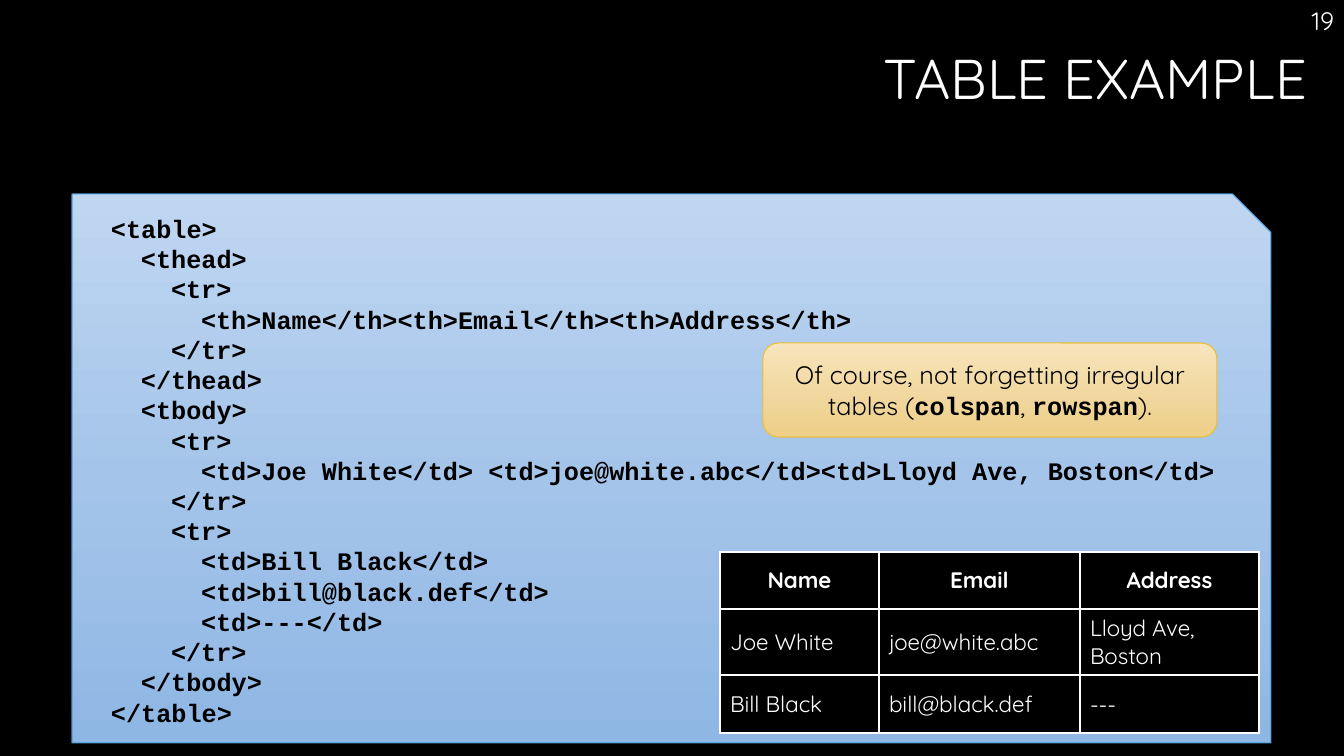
from copy import deepcopy

from lxml import etree
from pptx import Presentation
from pptx import util as u
from pptx.dml.color import RGBColor
from pptx.enum import shapes, text
from pptx.oxml import ns

PX = 914400 / 100.8
BLACK = RGBColor(0x00, 0x00, 0x00)
WHITE = RGBColor(0xFF, 0xFF, 0xFF)
BLUE_LINE = RGBColor(0x4A, 0x9B, 0xDC)
BLUE_STOPS = [
    (0, RGBColor(0xBF, 0xD6, 0xF2)),
    (0.52, RGBColor(0xA4, 0xC4, 0xE9)),
    (1, RGBColor(0x8F, 0xB7, 0xE4)),
]
GOLD_LINE = RGBColor(0xE9, 0xBF, 0x35)
GOLD_STOPS = [
    (0, RGBColor(0xF8, 0xE5, 0xBD)),
    (0.52, RGBColor(0xF1, 0xD8, 0xA0)),
    (1, RGBColor(0xEE, 0xCF, 0x89)),
]
LEFT, CENTER, RIGHT = text.PP_ALIGN.LEFT, text.PP_ALIGN.CENTER, text.PP_ALIGN.RIGHT
TOP, MIDDLE = text.MSO_ANCHOR.TOP, text.MSO_ANCHOR.MIDDLE
INDENT = 30

CODE = [
    (0, "<table>"),
    (1, "<thead>"),
    (2, "<tr>"),
    (3, "<th>Name</th><th>Email</th><th>Address</th>"),
    (2, "</tr>"),
    (1, "</thead>"),
    (1, "<tbody>"),
    (2, "<tr>"),
    (3, "<td>Joe White</td> <td>joe@white.abc</td><td>Lloyd Ave, Boston</td>"),
    (2, "</tr>"),
    (2, "<tr>"),
    (3, "<td>Bill Black</td>"),
    (3, "<td>bill@black.def</td>"),
    (3, "<td>---</td>"),
    (2, "</tr>"),
    (1, "</tbody>"),
    (0, "</table>"),
]
PEOPLE = [
    ["Name", "Email", "Address"],
    ["Joe White", "joe@white.abc", "Lloyd Ave, Boston"],
    ["Bill Black", "bill@black.def", "---"],
]


def px(value):
    return u.Emu(round(value * PX))


class Slide:
    body_font = "Quicksand"
    code_font = "Courier New"

    def __init__(self, deck):
        self.page = deck.slides.add_slide(deck.slide_layouts[5])
        self.page.background.fill.solid()
        self.page.background.fill.fore_color.rgb = BLACK

    def span(self, para, words, size, color, code=False, bold=False):
        span = para.add_run()
        span.text = words
        span.font.name = self.code_font if code else self.body_font
        span.font.size = u.Pt(size)
        span.font.bold = bold
        span.font.color.rgb = color

    def frame(self, box, anchor):
        frame = box.text_frame
        frame.word_wrap = True
        frame.auto_size = text.MSO_AUTO_SIZE.NONE
        frame.vertical_anchor = anchor
        return frame

    def title(self, words, left, top, width, height):
        box = self.page.shapes.title
        box.left, box.top, box.width, box.height = map(px, (left, top, width, height))
        para = self.frame(box, TOP).paragraphs[0]
        para.alignment = RIGHT
        para.line_spacing = 0.9
        self.span(para, words, 40, WHITE)

    def label(self, words, left, top, width, height):
        box = self.page.shapes.add_textbox(*map(px, (left, top, width, height)))
        para = self.frame(box, TOP).paragraphs[0]
        para.alignment = RIGHT
        self.span(para, words, 18, WHITE)

    def panel(self, kind, left, top, width, height, stops, line):
        box = self.page.shapes.add_shape(kind, *map(px, (left, top, width, height)))
        box.shadow.inherit = False
        box.fill.gradient()
        box.fill.gradient_angle = 270
        stop_list = box._element.spPr.find(".//" + ns.qn("a:gsLst"))
        stop_list.append(deepcopy(stop_list[0]))
        for stop, (position, color) in zip(box.fill.gradient_stops, stops):
            stop.position = position
            stop.color.rgb = color
        box.line.color.rgb = line
        box.line.width = u.Pt(0.75)
        return box

    def code(self, lines, left, top, width, height):
        box = self.panel(shapes.MSO_SHAPE.SNIP_1_RECTANGLE, left, top, width, height,
                         BLUE_STOPS, BLUE_LINE)
        box.adjustments[0] = 0.07
        frame = self.frame(box, TOP)
        frame.margin_left, frame.margin_top = px(39), 0
        for number, (depth, words) in enumerate(lines):
            para = frame.add_paragraph() if number else frame.paragraphs[0]
            para.alignment = LEFT
            para._p.get_or_add_pPr().set("marL", str(px(depth * INDENT)))
            self.span(para, words, 18, BLACK, code=True, bold=True)

    def callout(self, parts, left, top, width, height):
        box = self.panel(shapes.MSO_SHAPE.ROUNDED_RECTANGLE, left, top, width, height,
                         GOLD_STOPS, GOLD_LINE)
        para = self.frame(box, MIDDLE).paragraphs[0]
        para.alignment = CENTER
        for words, code in parts:
            self.span(para, words, 18, BLACK, code=code, bold=code)

    def border(self, cell):
        props = cell._tc.get_or_add_tcPr()
        for side in ("a:lnL", "a:lnR", "a:lnT", "a:lnB"):
            line = etree.SubElement(props, ns.qn(side), w=str(u.Pt(1)))
            fill = etree.SubElement(line, ns.qn("a:solidFill"))
            etree.SubElement(fill, ns.qn("a:srgbClr"), val=str(WHITE))

    def table(self, rows, left, top, widths, heights):
        area = map(px, (left, top, sum(widths), sum(heights)))
        grid = self.page.shapes.add_table(len(heights), len(widths), *area).table
        grid.horz_banding = False
        for column, width in zip(grid.columns, widths):
            column.width = px(width)
        for number, (row, height) in enumerate(zip(grid.rows, heights)):
            row.height = px(height)
            header = number == 0
            for cell, words in zip(row.cells, rows[number]):
                self.border(cell)
                cell.fill.solid()
                cell.fill.fore_color.rgb = BLACK
                cell.vertical_anchor = MIDDLE
                para = cell.text_frame.paragraphs[0]
                para.alignment = CENTER if header else LEFT
                self.span(para, words, 16, WHITE, bold=header)


def main():
    deck = Presentation()
    deck.slide_width, deck.slide_height = px(1344), px(756)
    slide = Slide(deck)
    slide.title("TABLE EXAMPLE", 26, 46, 1291, 142)
    slide.label("19", 1053, 0, 291, 40)
    slide.code(CODE, 72, 194, 1199, 549)
    slide.table(PEOPLE, 720, 552, [159, 201, 179], [57, 66, 58])
    slide.callout([
        ("Of course, not forgetting irregular tables (", False),
        ("colspan", True),
        (", ", False),
        ("rowspan", True),
        (").", False),
    ], 763, 343, 454, 94)
    deck.save("out.pptx")


if __name__ == "__main__":
    main()
